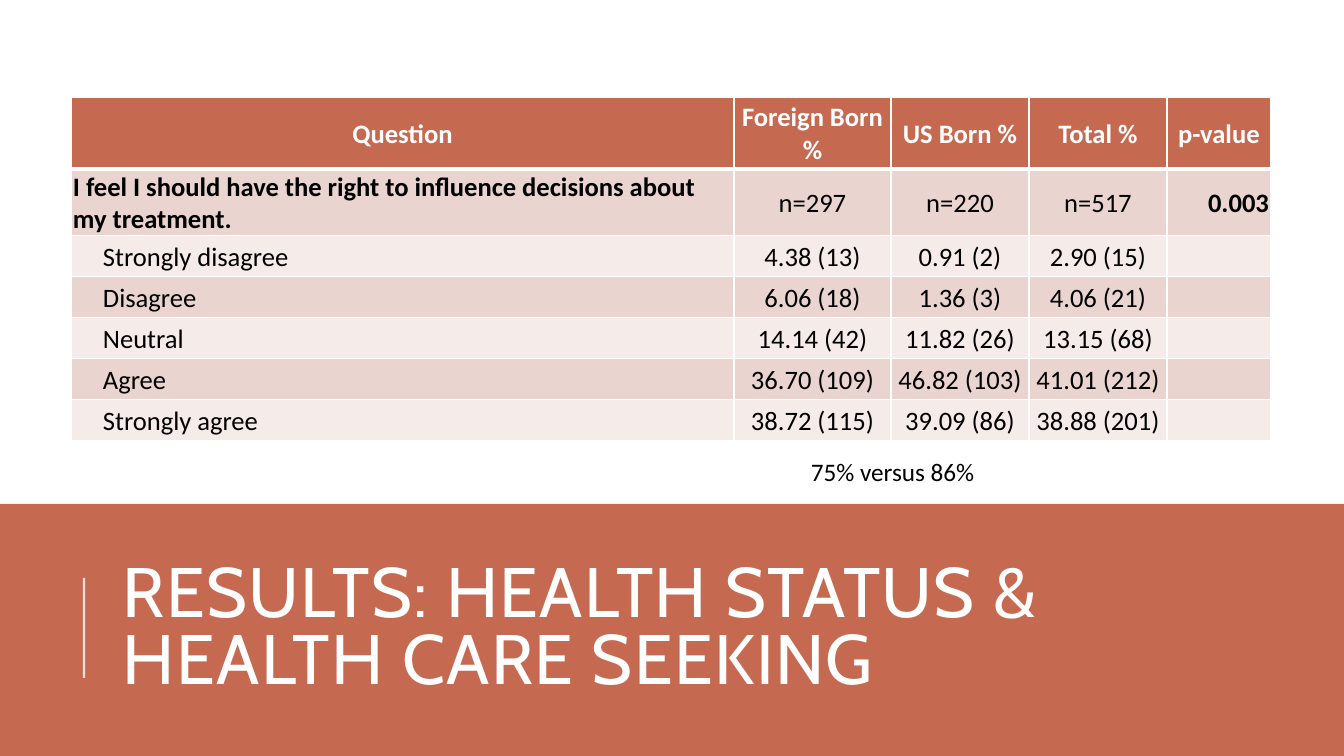
import lxml.etree
import pptx
import pptx.dml.color
import pptx.enum.shapes
import pptx.enum.text
import pptx.oxml.ns
import pptx.util

RGBColor = pptx.dml.color.RGBColor
ALIGN = pptx.enum.text.PP_ALIGN
MIDDLE = pptx.enum.text.MSO_ANCHOR.MIDDLE

RUST = RGBColor(0xC6, 0x69, 0x51)
ROSE = RGBColor(0xEA, 0xD4, 0xD0)
BLUSH = RGBColor(0xF5, 0xEB, 0xE9)
WHITE = RGBColor(0xFF, 0xFF, 0xFF)
BLACK = RGBColor(0x00, 0x00, 0x00)

SLIDE_WIDTH, SLIDE_HEIGHT = 1344, 756
BAND_TOP = 504
COLUMN_WIDTHS = [663, 157, 138, 138, 104]
ROW_HEIGHTS = [72, 66] + [41] * 5
ANSWER_INDENT = 32

SURVEY = [
    ["Question", "Foreign Born %", "US Born %", "Total %", "p-value"],
    ["I feel I should have the right to influence decisions about my treatment.",
     "n=297", "n=220", "n=517", "0.003"],
    ["Strongly disagree", "4.38 (13)", "0.91 (2)", "2.90 (15)", ""],
    ["Disagree", "6.06 (18)", "1.36 (3)", "4.06 (21)", ""],
    ["Neutral", "14.14 (42)", "11.82 (26)", "13.15 (68)", ""],
    ["Agree", "36.70 (109)", "46.82 (103)", "41.01 (212)", ""],
    ["Strongly agree", "38.72 (115)", "39.09 (86)", "38.88 (201)", ""],
]


def px(length):
    return pptx.util.Emu(round(length * 914400 / 100.8))


def add_xml(parent, tag, **attributes):
    return lxml.etree.SubElement(parent, pptx.oxml.ns.qn(tag), attributes)


def write(frame, text, size=19, font="Calibri", color=BLACK, bold=False,
          align=ALIGN.LEFT, line_spacing=None, tracking=None):
    """Put one formatted paragraph in a text frame; tracking is in points."""
    para = frame.paragraphs[0]
    para.alignment = align
    para.line_spacing = line_spacing
    span = para.add_run()
    span.text = text
    span.font.size = pptx.util.Pt(size)
    span.font.name = font
    span.font.bold = bold
    span.font.color.rgb = color
    if tracking:
        span.font._element.set("spc", str(tracking * 100))


def draw_borders(cell, **points):
    """Give a cell white borders, with widths by side: L, R, T, B."""
    properties = cell._tc.get_or_add_tcPr()
    for side, width in points.items():
        border = add_xml(properties, f"a:ln{side}", w=str(pptx.util.Pt(width)))
        fill = add_xml(border, "a:solidFill")
        add_xml(fill, "a:srgbClr", val=str(WHITE))


class SlideBuilder:
    def __init__(self, page):
        self.page = page

    def band(self, left, top, width, height, color):
        box = self.page.shapes.add_shape(
            pptx.enum.shapes.MSO_SHAPE.RECTANGLE,
            px(left), px(top), px(width), px(height))
        box.shadow.inherit = False
        box.fill.solid()
        box.fill.fore_color.rgb = color
        box.line.fill.background()

    def rule(self, x, start, end, color, width, opacity):
        line = self.page.shapes.add_connector(
            pptx.enum.shapes.MSO_CONNECTOR.STRAIGHT,
            px(x), px(start), px(x), px(end))
        line.line.color.rgb = color
        line.line.width = pptx.util.Pt(width)
        shade = line.line._ln.find(".//" + pptx.oxml.ns.qn("a:srgbClr"))
        add_xml(shade, "a:alpha", val=str(opacity * 1000))
        add_xml(line._element.spPr, "a:effectLst")

    def text(self, left, top, width, height, text, anchor=None, **style):
        box = self.page.shapes.add_textbox(px(left), px(top), px(width), px(height))
        box.text_frame.word_wrap = True
        box.text_frame.vertical_anchor = anchor
        write(box.text_frame, text, **style)

    def table(self, left, top, rows):
        frame = self.page.shapes.add_table(
            len(rows), len(COLUMN_WIDTHS), px(left), px(top),
            px(sum(COLUMN_WIDTHS)), px(sum(ROW_HEIGHTS)))
        table = frame.table
        for column, width in zip(table.columns, COLUMN_WIDTHS):
            column.width = px(width)
        for row, height in zip(table.rows, ROW_HEIGHTS):
            row.height = px(height)
        for r, values in enumerate(rows):
            for c, value in enumerate(values):
                self.cell(table.cell(r, c), r, c, value)

    def cell(self, cell, row, column, value):
        header, question = row == 0, row == 1
        last = column == len(COLUMN_WIDTHS) - 1
        draw_borders(cell, L=1, R=1, T=3 if question else 1, B=3 if header else 1)
        cell.fill.solid()
        cell.fill.fore_color.rgb = RUST if header else ROSE if row % 2 else BLUSH
        cell.vertical_anchor = MIDDLE
        indented = column == 0 and row > 1
        cell.margin_left = px(ANSWER_INDENT if indented else 2)
        cell.margin_right = cell.margin_top = px(2)
        cell.margin_bottom = 0
        if not value:
            return
        align = ALIGN.CENTER
        if not header and column == 0:
            align = ALIGN.LEFT
        elif not header and last:
            align = ALIGN.RIGHT
        write(cell.text_frame, value, color=WHITE if header else BLACK,
              bold=header or (question and (column == 0 or last)), align=align)


def main():
    deck = pptx.Presentation()
    deck.slide_width, deck.slide_height = px(SLIDE_WIDTH), px(SLIDE_HEIGHT)
    builder = SlideBuilder(deck.slides.add_slide(deck.slide_layouts[6]))
    builder.band(0, BAND_TOP, SLIDE_WIDTH, SLIDE_HEIGHT - BAND_TOP, RUST)
    builder.rule(84, 678, 578, WHITE, width=1.5, opacity=80)
    builder.table(71, 97, SURVEY)
    builder.text(113, 548, 1174, 165, "RESULTS: HEALTH STATUS & HEALTH CARE SEEKING",
                 anchor=MIDDLE, size=50, font="Cabin", color=WHITE,
                 line_spacing=0.8, tracking=1)
    builder.text(801, 451, 208, 41, "75% versus 86%", size=18)
    deck.save("out.pptx")


if __name__ == "__main__":
    main()
